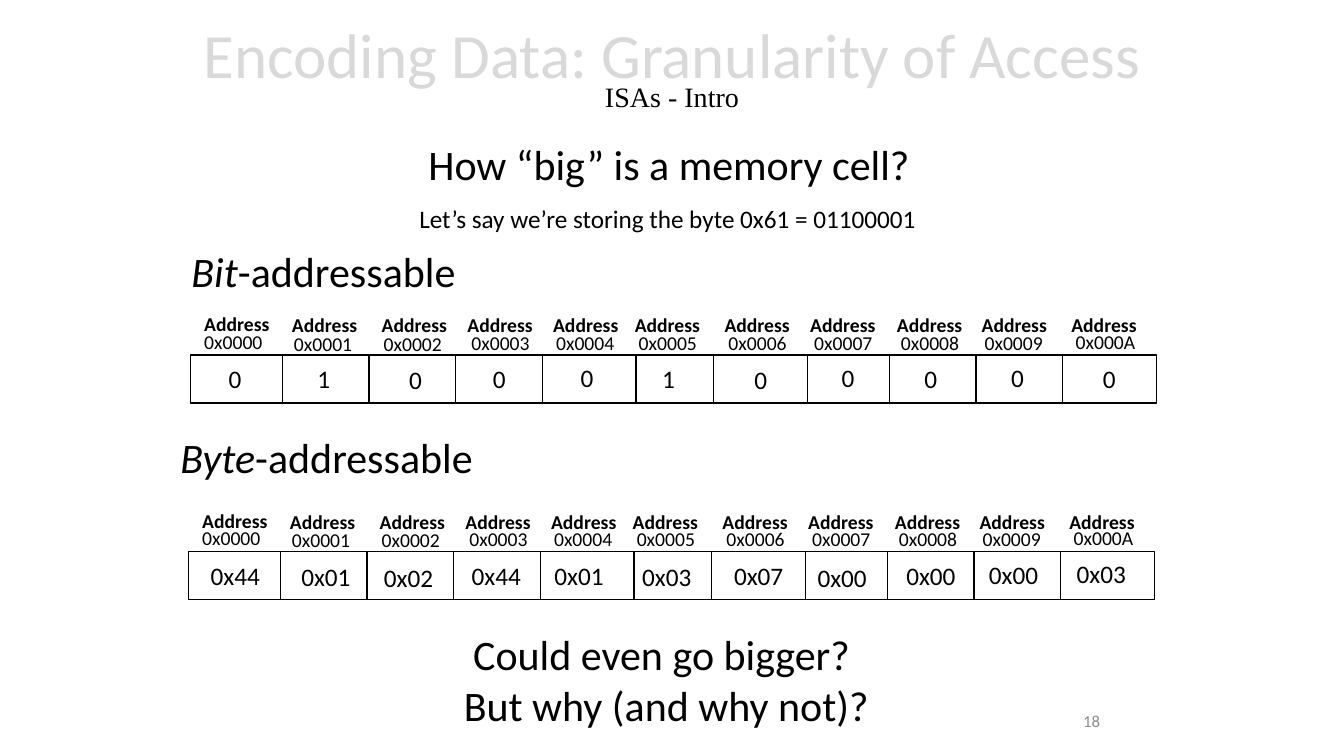
from dataclasses import dataclass

from pptx import Presentation
from pptx.dml.color import RGBColor
from pptx.enum.shapes import MSO_SHAPE as Shape
from pptx.enum.text import MSO_ANCHOR as Anchor, MSO_AUTO_SIZE as AutoSize, PP_ALIGN as Align
from pptx.util import Emu, Pt

PX = 9144  # one px is a hundredth of an inch


@dataclass(frozen=True)
class Type:
    size: int
    color: str = "000000"
    font: str = "Calibri"
    bold: bool = False
    italic: bool = False


@dataclass(frozen=True)
class Theme:
    paper: str = "FFFFFF"
    ink: str = "000000"
    border: int = 1
    title: Type = Type(45, "D9D9D9")
    subtitle: Type = Type(20, font="Times New Roman")
    heading: Type = Type(30)
    emphasis: Type = Type(30, italic=True)
    body: Type = Type(18)
    label: Type = Type(14)
    label_bold: Type = Type(14, bold=True)
    number: Type = Type(12, "8C8C8C")


class SlideBuilder:
    def __init__(self, page, theme):
        self.page = page
        self.theme = theme
        self.shapes = page.shapes

    def place(self, *lengths):
        return [Emu(length * PX) for length in lengths]

    def span(self, para, text, style):
        span = para.add_run()
        span.text = text
        font = span.font
        font.name, font.size = style.font, Pt(style.size)
        font.bold, font.italic = style.bold, style.italic
        font.color.rgb = RGBColor.from_string(style.color)

    def text(self, at, *lines, align=Align.LEFT, wrap=False, grow=True,
             anchor=Anchor.TOP, side=10):
        """Each line is a list of (text, type) pairs."""
        box = self.shapes.add_textbox(*self.place(*at))
        frame = box.text_frame
        frame.word_wrap = wrap
        frame.auto_size = AutoSize.SHAPE_TO_FIT_TEXT if grow else AutoSize.NONE
        frame.vertical_anchor = anchor
        frame.margin_left = frame.margin_right = Emu(side * PX)
        for index, line in enumerate(lines):
            para = frame.add_paragraph() if index else frame.paragraphs[0]
            para.alignment = align
            for text, style in line:
                self.span(para, text, style)
        return frame

    def label(self, left, top, width, text, style):
        self.text((left, top, width, 34), [(text, style)],
                  align=Align.CENTER, wrap=True, side=0)

    def cell(self, left, top):
        cell = self.shapes.add_shape(Shape.RECTANGLE, *self.place(left, top, 93, 48))
        cell.shadow.inherit = False
        cell.fill.solid()
        cell.fill.fore_color.rgb = RGBColor.from_string(self.theme.paper)
        cell.line.color.rgb = RGBColor.from_string(self.theme.ink)
        cell.line.width = Pt(self.theme.border)
        return cell

    def memory(self, shift, top, value_width, values):
        """One row of memory cells, kept together as a group."""
        self.shapes = self.page.shapes.add_group_shape().shapes
        cells = {index: self.cell(CELL_LEFTS[index] + shift, top) for index in CELL_ORDER}

        # Addresses above the cells
        for index, (name_left, address_left, rise) in enumerate(ADDRESSES):
            name_top = top - (46 if index else 47)
            self.label(name_left + shift, name_top, 78, "Address", self.theme.label_bold)
            self.label(address_left + shift, top - rise, 63, f"0x{index:04X}", self.theme.label)

        # Values: the front cell carries its own, the rest lie on top
        for index, (value, left, drop) in enumerate(values):
            if index == FRONT_CELL:
                frame = cells[index].text_frame
                frame.vertical_anchor = Anchor.MIDDLE
                para = frame.paragraphs[0]
                para.alignment = Align.CENTER
                self.span(para, value, self.theme.body)
            else:
                self.text((left, top + drop, value_width, 40), [(value, self.theme.body)])
        self.shapes = self.page.shapes


# Cell columns, in px
FRONT_CELL = 6
CELL_LEFTS = [189, *range(280, 539, 86), 627, 708, *range(796, 1055, 86)]
CELL_ORDER = [5, 0, 1, 2, 3, 4, 7, 8, 9, 10, FRONT_CELL]

# Left of "Address", left of the number, rise of the number above the cell
ADDRESSES = [
    (196, 200, 30), (283, 289, 28), (372, 378, 28), (457, 465, 29),
    (542, 549, 29), (623, 631, 29), (712, 720, 29), (797, 805, 29),
    (883, 891, 29), (967, 974, 29), (1056, 1065, 30),
]

# Value, left, drop below the top of the cell
BITS = [
    ("0", 217, 4), ("1", 305, 4), ("0", 396, 5), ("0", 479, 4),
    ("0", 566, 3), ("1", 647, 4), ("0", 708, 0), ("0", 825, 3),
    ("0", 907, 4), ("0", 993, 3), ("0", 1084, 4),
]
BYTES = [
    ("0x44", 199, 4), ("0x01", 289, 5), ("0x02", 371, 6), ("0x44", 458, 4),
    ("0x01", 540, 4), ("0x03", 627, 5), ("0x07", 706, 0), ("0x00", 801, 6),
    ("0x00", 889, 4), ("0x00", 971, 3), ("0x03", 1058, 2),
]


def main():
    deck = Presentation()
    deck.slide_width, deck.slide_height = Emu(1333 * PX), Emu(750 * PX)
    theme = Theme()
    slide = SlideBuilder(deck.slides.add_slide(deck.slide_layouts[6]), theme)

    # Title and slide number
    title = slide.text((0, 1, 1333, 145),
                       [("Encoding Data: Granularity of Access", theme.title)],
                       align=Align.CENTER, wrap=True, grow=False, anchor=Anchor.MIDDLE)
    para = title.paragraphs[0]
    para.line_spacing = 0.7
    para.add_line_break()
    slide.span(para, "ISAs - Intro", theme.subtitle)
    slide.text((801, 695, 300, 40), [("18", theme.number)],
               align=Align.RIGHT, wrap=True, grow=False, anchor=Anchor.MIDDLE)

    # Question and example
    slide.text((415, 132, 502, 61), [("How “big” is a memory cell?", theme.heading)])
    slide.text((406, 197, 519, 40),
               [("Let’s say we’re storing the byte 0x61 = 01100001", theme.body)])

    # Bit-addressable memory
    slide.text((180, 239, 285, 61),
               [("Bit", theme.emphasis), ("-addressable", theme.heading)])
    slide.memory(0, 352, 33, BITS)

    # Byte-addressable memory
    slide.text((169, 423, 313, 61),
               [("Byte", theme.emphasis), ("-addressable", theme.heading)])
    slide.memory(-2, 547, 69, BYTES)

    # Closing question
    slide.text((448, 619, 426, 111),
               [("Could even go bigger? ", theme.heading)],
               [("But why (and why not)?", theme.heading)], align=Align.CENTER)

    deck.save("out.pptx")


if __name__ == "__main__":
    main()
